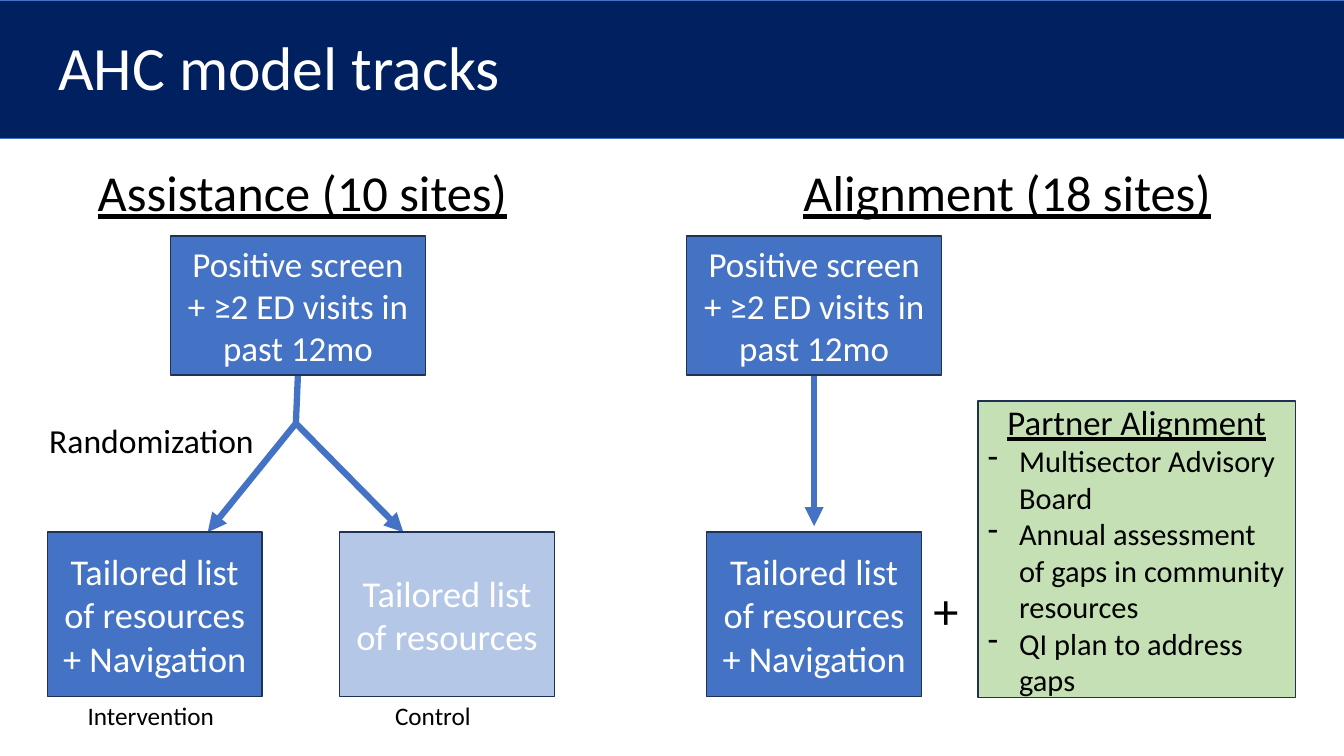
from lxml import etree
from pptx import Presentation
from pptx.dml.color import RGBColor
from pptx.enum.shapes import MSO_CONNECTOR, MSO_SHAPE
from pptx.enum.text import MSO_ANCHOR, PP_ALIGN
from pptx.oxml.ns import qn
from pptx.util import Inches, Pt

RECT, LINE = MSO_SHAPE.RECTANGLE, MSO_CONNECTOR.STRAIGHT
TOP, MID = MSO_ANCHOR.TOP, MSO_ANCHOR.MIDDLE
LEFT, CENTER = PP_ALIGN.LEFT, PP_ALIGN.CENTER
NAVY, BLUE, PALE, GREEN = "002060", "4472C4", "B4C7E7", "C5E0B4"
EDGE, BLACK, WHITE = "1E3256", "000000", "FFFFFF"
FONT = "Calibri"
WIDE, HIGH = 13.33, 7.5

# Grid: column lefts, row tops and the sizes of each kind of part
COLS = {"margin": 0.48, "arm 1": 0.47, "arm 2": 3.37, "screen 1": 1.69,
        "screen 2": 6.81, "list": 7.01, "head 2": 7.47, "partner": 9.7}
ROWS = {"head": 1.62, "screen": 2.34, "fork": 4.2, "arm": 5.28, "foot": 6.9}
SCREEN, ARM, HEAD = (2.53, 1.38), (2.13, 1.63), (5.04, 0.94)

TITLE = "AHC model tracks"
HEADS = [("margin", "Assistance (10 sites)"), ("head 2", "Alignment (18 sites)")]
CRITERIA = "Positive screen + ≥2 ED visits in past 12mo"
FULL = "Tailored list of resources + Navigation"
BOXES = [
    ("screen 1", "screen", SCREEN, CRITERIA, 25, BLUE),
    ("screen 2", "screen", SCREEN, CRITERIA, 25, BLUE),
    ("arm 1", "arm", ARM, FULL, 25.9, BLUE),
    ("arm 2", "arm", ARM, "Tailored list of resources", 26, PALE),
    ("list", "arm", ARM, FULL, 25.9, BLUE),
]
PARTNER = "Partner Alignment"
TASKS = ["Multisector Advisory Board",
         "Annual assessment of gaps in community resources",
         "QI plan to address gaps"]
FEET = [("arm 1", 0.3, "Intervention"), ("arm 2", 0.45, "Control")]


def color(code):
    return RGBColor.from_string(code)


def write(para, text, size, tone, align=LEFT, under=False):
    para.alignment = align
    run = para.add_run()
    run.text = text
    font = run.font
    font.name, font.size, font.underline = FONT, Pt(size), under
    font.color.rgb = color(tone)


def rect(x, y, w, h, fill, edge=EDGE, weight=1):
    shape = slide.shapes.add_shape(RECT, *map(Inches, (x, y, w, h)))
    shape.shadow.inherit = False
    shape.fill.solid()
    shape.fill.fore_color.rgb = color(fill)
    shape.line.color.rgb = color(edge)
    shape.line.width = Pt(weight)
    frame = shape.text_frame
    frame.word_wrap, frame.vertical_anchor = True, MID
    return frame


def label(x, y, w, h, text, size, tone=BLACK, align=LEFT, under=False, anchor=TOP):
    frame = slide.shapes.add_textbox(*map(Inches, (x, y, w, h))).text_frame
    frame.word_wrap, frame.vertical_anchor = True, anchor
    para = frame.paragraphs[0]
    write(para, text, size, tone, align, under)
    return para


def link(start, end, head=True):
    line = slide.shapes.add_connector(LINE, *map(Inches, (*start, *end)))
    line.line.color.rgb = color(BLUE)
    line.line.width = Pt(4.5)
    if head:
        etree.SubElement(line.line._get_or_add_ln(), qn("a:tailEnd"), type="triangle")
    etree.SubElement(line._element.spPr, qn("a:effectLst"))


def dash(para):
    """Give a paragraph a hanging dash bullet."""
    props = para._p.get_or_add_pPr()
    props.set("marL", str(Inches(0.31)))
    props.set("indent", str(-Inches(0.31)))
    etree.SubElement(props, qn("a:buChar"), char="-")


deck = Presentation()
deck.slide_width, deck.slide_height = Inches(WIDE), Inches(HIGH)
slide = deck.slides.add_slide(deck.slide_layouts[6])

rect(-0.01, 0, WIDE + 0.03, 1.37, NAVY, BLUE, 0.5)
title = label(COLS["margin"], 0.23, 11.5, 0.94, TITLE, 44, WHITE, anchor=MID)
title.line_spacing = 0.9
for col, text in HEADS:
    head = label(COLS[col], ROWS["head"], *HEAD, text, 36, align=CENTER, under=True)
    head.line_spacing = 0.9

# Links run from under each screen box to the boxes below
base = ROWS["screen"] + SCREEN[1]
hub = COLS["screen 1"] + SCREEN[0] / 2
fork = (hub - 0.02, ROWS["fork"])
link((hub, base), fork, head=False)
for end in (2.06, 4):
    link(fork, (end, ROWS["arm"]))
stem = COLS["screen 2"] + SCREEN[0] / 2
link((stem, base), (stem, ROWS["arm"] - 0.06))

for col, row, size, text, points, fill in BOXES:
    frame = rect(COLS[col], ROWS[row], *size, fill)
    write(frame.paragraphs[0], text, points, WHITE, CENTER)

panel = rect(COLS["partner"], 3.98, 3.15, 2.94, GREEN)
write(panel.paragraphs[0], PARTNER, 24.8, BLACK, CENTER, True)
for task in TASKS:
    item = panel.add_paragraph()
    dash(item)
    write(item, task, 21.7, BLACK)

label(0.39, 4.12, 2.53, 0.5, "Randomization", 24)
for col, shift, text in FEET:
    label(COLS[col] + shift, ROWS["foot"], 1.6, 0.4, text, 18)
label(COLS["list"] + ARM[0] + 0.02, 5.7, 0.45, 0.71, "+", 36)

deck.save("out.pptx")
